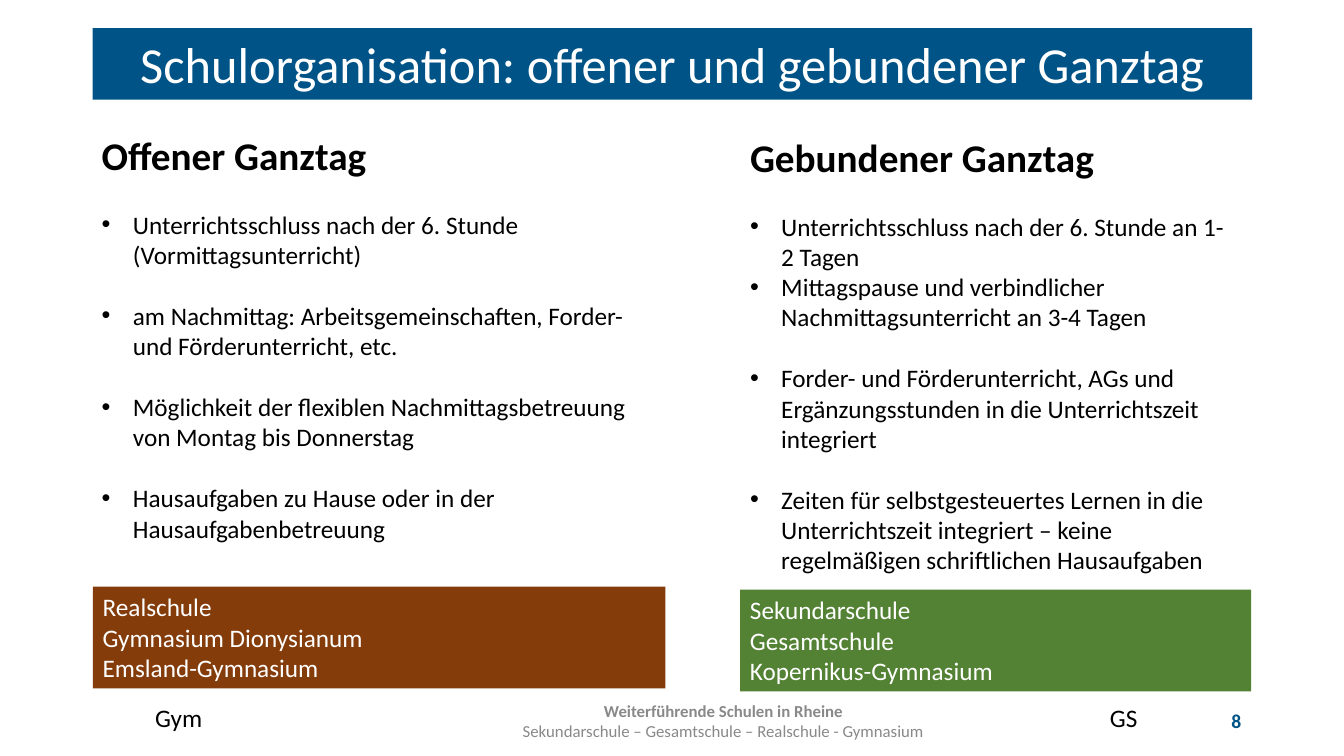
import pptx
import pptx.util
import pptx.dml.color
import pptx.enum.shapes
import pptx.enum.text
import pptx.oxml.ns
import lxml.etree

PX = 9144  # 100 px to the inch
ALIGN = pptx.enum.text.PP_ALIGN
ANCHOR = pptx.enum.text.MSO_ANCHOR
THEME = {
    "font": "Calibri",
    "blue": "005386", "brown": "843C0B", "green": "548235",
    "title": {"size": 36, "color": "FFFFFF"},
    "head": {"size": 28, "color": "000000", "bold": True},
    "body": {"size": 18, "color": "000000"},
    "school": {"size": 18, "color": "FFFFFF"},
    "foot": {"size": 12, "color": "898989"},
    "foot bold": {"size": 12, "color": "898989", "bold": True},
    "page": {"size": 14, "color": "005386", "bold": True},
}
INDENT = 31
GAP = 22


def add_box(spot, lines, fill=None, frame={}, para={}):
    """Add a box; lines holds (text, style, space before or None for no bullet)."""
    place = [n * PX for n in spot]
    if fill:
        box = slide.shapes.add_shape(pptx.enum.shapes.MSO_SHAPE.RECTANGLE, *place)
        box.shadow.inherit = False
        box.fill.solid()
        box.fill.fore_color.rgb = pptx.dml.color.RGBColor.from_string(THEME[fill])
        box.line.fill.background()
    else:
        box = slide.shapes.add_textbox(*place)
    text = box.text_frame
    for key, value in {"word_wrap": True, "vertical_anchor": ANCHOR.TOP, **frame}.items():
        setattr(text, key, value)
    for i, (words, style, gap) in enumerate(lines):
        par = text.paragraphs[0] if i == 0 else text.add_paragraph()
        if gap is not None:
            par.space_before = pptx.util.Pt(gap)
            props = par._p.get_or_add_pPr()
            props.set("marL", str(INDENT * PX))
            props.set("indent", str(-INDENT * PX))
            for tag, key, value in (("a:buFont", "typeface", "Arial"), ("a:buChar", "char", "•")):
                lxml.etree.SubElement(props, pptx.oxml.ns.qn(tag)).set(key, value)
        for key, value in {"alignment": ALIGN.LEFT, **para}.items():
            setattr(par, key, value)
        run = par.add_run()
        run.text = words
        look = THEME[style]
        form = {"name": THEME["font"], "size": pptx.util.Pt(look["size"]),
                "bold": look.get("bold", False)}
        for key, value in form.items():
            setattr(run.font, key, value)
        run.font.color.rgb = pptx.dml.color.RGBColor.from_string(look["color"])


deck = pptx.Presentation()
deck.slide_width, deck.slide_height = 1333 * PX, 750 * PX
slide = deck.slides.add_slide(deck.slide_layouts[6])

add_box((92, 28, 1150, 71),
        [("Schulorganisation: offener und gebundener Ganztag", "title", None)],
        "blue", {"vertical_anchor": ANCHOR.BOTTOM},
        {"alignment": ALIGN.CENTER, "line_spacing": 0.9})

columns = [
    ((91, 125, 568, 421), "Offener Ganztag", [
        ("Unterrichtsschluss nach der 6. Stunde (Vormittagsunterricht)", GAP),
        ("am Nachmittag: Arbeitsgemeinschaften, Forder- und Förderunterricht, etc.", GAP),
        ("Möglichkeit der flexiblen Nachmittagsbetreuung von Montag bis Donnerstag", GAP),
        ("Hausaufgaben zu Hause oder in der Hausaufgabenbetreuung", GAP),
    ], (92, 582, 568, 101), "brown",
        ["Realschule", "Gymnasium Dionysianum", "Emsland-Gymnasium"]),
    ((734, 127, 491, 481), "Gebundener Ganztag", [
        ("Unterrichtsschluss nach der 6. Stunde an 1-2 Tagen", GAP),
        ("Mittagspause und verbindlicher Nachmittagsunterricht an 3-4 Tagen", 0),
        ("Forder- und Förderunterricht, AGs und Ergänzungsstunden in die "
         "Unterrichtszeit integriert", GAP),
        ("Zeiten für selbstgesteuertes Lernen in die Unterrichtszeit integriert – "
         "keine regelmäßigen schriftlichen Hausaufgaben", GAP),
    ], (734, 585, 507, 101), "green",
        ["Sekundarschule", "Gesamtschule", "Kopernikus-Gymnasium"]),
]
for spot, head, points, base, fill, schools in columns:
    add_box(base, [(name, "school", None) for name in schools], fill)
    add_box(spot, [(head, "head", None)] + [(words, "body", gap) for words, gap in points])

add_box((442, 695, 551, 40),
        [("Weiterführende Schulen in Rheine", "foot bold", None),
         ("Sekundarschule – Gesamtschule – Realschule - Gymnasium", "foot", None)],
        frame={"vertical_anchor": ANCHOR.MIDDLE}, para={"alignment": ALIGN.CENTER})
add_box((1195, 695, 46, 40), [("8", "page", None)],
        frame={"vertical_anchor": ANCHOR.MIDDLE}, para={"alignment": ALIGN.RIGHT})
for left, label in ((144, "Gym"), (1091, "GS")):
    add_box((left, 692, 84, 40), [(label, "body", None)])

deck.save("out.pptx")
